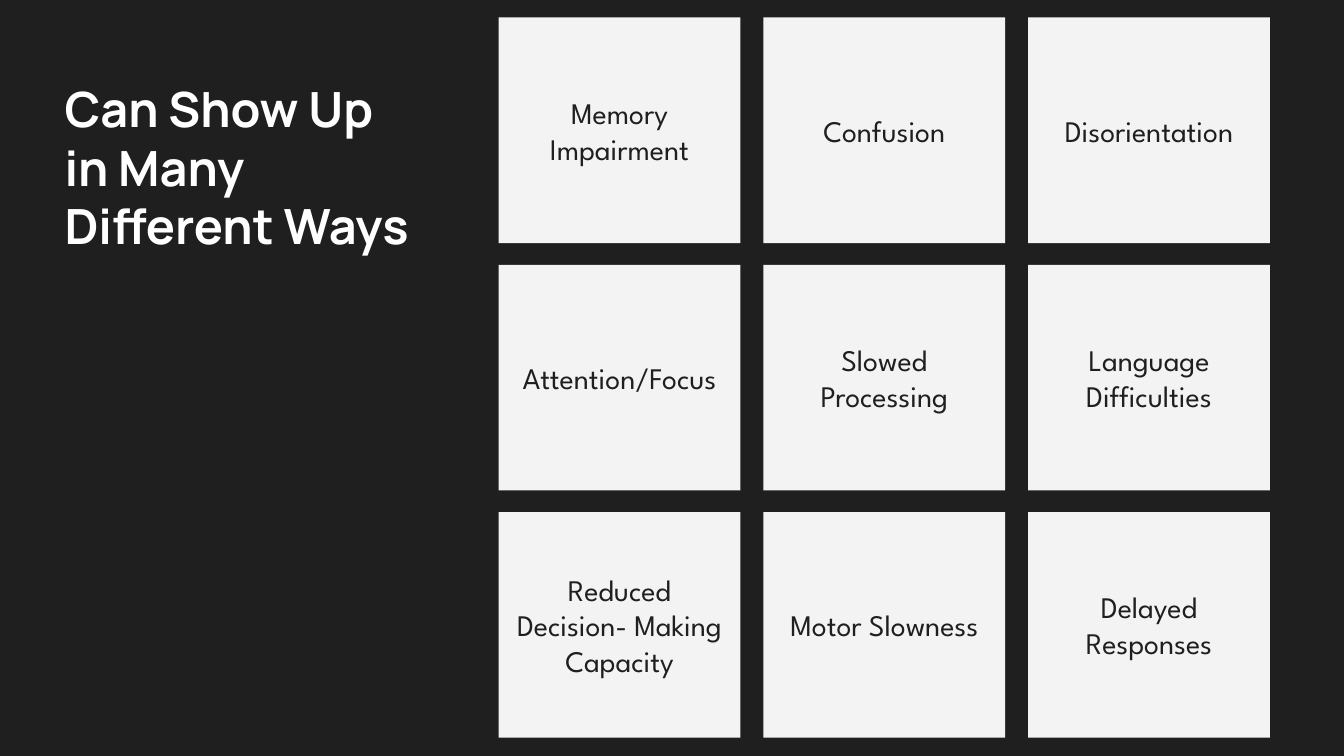
from typing import NamedTuple

from pptx import Presentation
from pptx.dml.color import RGBColor
from pptx.enum.shapes import MSO_SHAPE
from pptx.enum.text import MSO_ANCHOR, MSO_AUTO_SIZE, PP_ALIGN
from pptx.util import Inches, Pt

HUES = {"dark": "1F1F1F", "card": "F3F3F3", "white": "FFFFFF"}
WIDE = 10
HIGH = WIDE * 9 / 16


class Grid(NamedTuple):
    left: float
    top: float
    wide: float
    high: float
    step_x: float
    step_y: float
    cols: int


class Card(NamedTuple):
    text: str
    row: int
    col: int


GRID = Grid(3.71, 0.13, 1.8, 1.68, 1.97, 1.84, 3)
SIGNS = [
    "Memory Impairment", "Confusion", "Disorientation",
    "Attention/Focus", "Slowed Processing", "Language Difficulties",
    "Reduced Decision- Making Capacity", "Motor Slowness", "Delayed Responses",
]
CARDS = [Card(text, *divmod(i, GRID.cols)) for i, text in enumerate(SIGNS)]


def hue(name: str) -> RGBColor:
    """Look up a colour by name."""
    return RGBColor.from_string(HUES[name])


def write(shape, text: str, *, size: float, font: str, color: str,
          bold: bool = False, align=PP_ALIGN.LEFT, anchor=MSO_ANCHOR.TOP,
          fit=MSO_AUTO_SIZE.NONE) -> None:
    """Put formatted text in a shape."""
    frame = shape.text_frame
    frame.word_wrap = True
    frame.auto_size = fit
    frame.vertical_anchor = anchor
    frame.margin_left = frame.margin_right = Inches(0.1)
    frame.margin_top = frame.margin_bottom = Inches(0.1)
    line = frame.paragraphs[0]
    line.alignment = align
    run = line.add_run()
    run.text = text
    run.font.size = Pt(size)
    run.font.name = font
    run.font.bold = bold
    run.font.color.rgb = hue(color)


def draw_card(slide, card: Card, grid: Grid) -> None:
    """Draw one card in its grid cell."""
    box = slide.shapes.add_shape(
        MSO_SHAPE.RECTANGLE,
        Inches(grid.left + card.col * grid.step_x),
        Inches(grid.top + card.row * grid.step_y),
        Inches(grid.wide), Inches(grid.high))
    box.shadow.inherit = False
    box.fill.solid()
    box.fill.fore_color.rgb = hue("card")
    box.line.fill.background()
    write(box, card.text, size=16, font="League Spartan", color="dark",
          align=PP_ALIGN.CENTER, anchor=MSO_ANCHOR.MIDDLE)


def main() -> None:
    """Build and save the slide."""
    deck = Presentation()
    deck.slide_width, deck.slide_height = Inches(WIDE), Inches(HIGH)
    slide = deck.slides.add_slide(deck.slide_layouts[5])
    back = slide.background.fill
    back.solid()
    back.fore_color.rgb = hue("dark")
    title = slide.shapes.title
    title.left, title.top = Inches(0.38), Inches(0.49)
    title.width, title.height = Inches(2.84), Inches(1.95)
    write(title, "Can Show Up in Many Different Ways", size=26, font="Manrope",
          color="white", bold=True, fit=MSO_AUTO_SIZE.SHAPE_TO_FIT_TEXT)
    for card in CARDS:
        draw_card(slide, card, GRID)
    deck.save("out.pptx")


if __name__ == "__main__":
    main()
